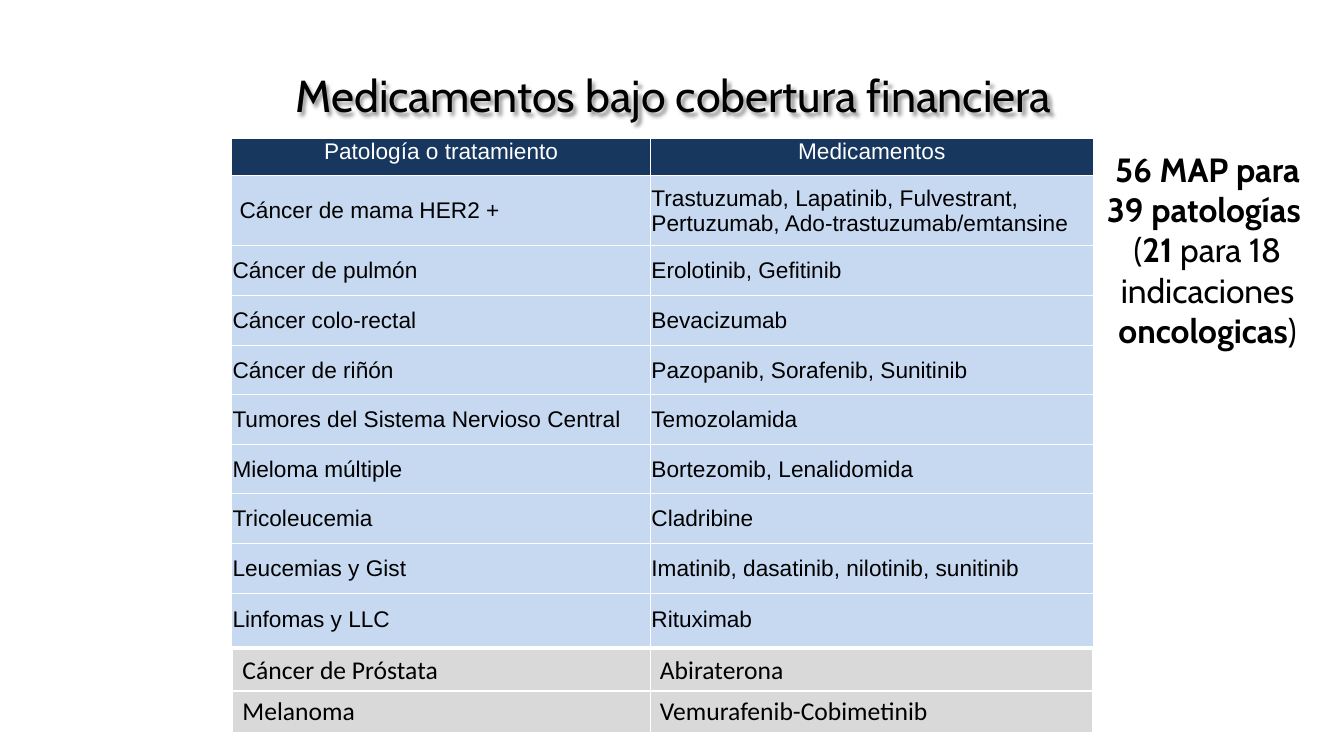
import pptx
import pptx.util
import pptx.dml.color
import pptx.enum.text
import pptx.oxml
import pptx.oxml.ns

PX = 9144  # EMU per px, 100 px to the inch
THEME = {
    "ink": "000000", "white": "FFFFFF",
    "header": "17375E", "treatment": "C6D9F1", "added": "D9D9D9",
    "title_font": "Cabin", "table_font": "Arial", "added_font": "Calibri",
    "title_size": 45.5, "note_size": 34.1, "table_size": 23, "added_size": 26,
}
NS = pptx.oxml.ns.nsdecls("a")
RGB = pptx.dml.color.RGBColor.from_string
CENTER = pptx.enum.text.PP_ALIGN.CENTER
LEFT = pptx.enum.text.PP_ALIGN.LEFT
TOP = pptx.enum.text.MSO_ANCHOR.TOP
MIDDLE = pptx.enum.text.MSO_ANCHOR.MIDDLE

treatments = [
    ("Patología o tratamiento", "Medicamentos"),
    ("Cáncer de mama HER2 +",
     "Trastuzumab, Lapatinib, Fulvestrant, Pertuzumab, Ado-trastuzumab/emtansine"),
    ("Cáncer de pulmón", "Erolotinib, Gefitinib"),
    ("Cáncer colo-rectal", "Bevacizumab"),
    ("Cáncer de riñón", "Pazopanib, Sorafenib, Sunitinib"),
    ("Tumores del Sistema Nervioso Central", "Temozolamida"),
    ("Mieloma múltiple", "Bortezomib, Lenalidomida"),
    ("Tricoleucemia", "Cladribine"),
    ("Leucemias y Gist", "Imatinib, dasatinib, nilotinib, sunitinib"),
    ("Linfomas y LLC", "Rituximab"),
]
added = [("Cáncer de Próstata", "Abiraterona"),
         ("Melanoma", "Vemurafenib-Cobimetinib")]

prs = pptx.Presentation()
prs.slide_width, prs.slide_height = 1896 * PX, 1067 * PX
s = prs.slides.add_slide(prs.slide_layouts[6])


def add_grid(rows, left, top, widths, heights, style, margins, rules):
    """Draw a white-ruled table; rules maps a row to the width of its bottom rule."""
    tbl = s.shapes.add_table(len(rows), 2, left * PX, top * PX,
                             sum(widths) * PX, sum(heights) * PX).table
    tbl.first_row = tbl.horz_banding = False
    for col, width in zip(tbl.columns, widths):
        col.width = width * PX
    for i, (row, height) in enumerate(zip(rows, heights)):
        tbl.rows[i].height = height * PX
        for j, text in enumerate(row):
            cell = tbl.cell(i, j)
            for side, width in (("L", 1), ("R", 1), ("T", rules.get(i - 1, 1)),
                                ("B", rules.get(i, 1))):
                cell._tc.get_or_add_tcPr().append(pptx.oxml.parse_xml(
                    f'<a:ln{side} {NS} w="{int(width * 12700)}"><a:solidFill>'
                    f'<a:srgbClr val="{THEME["white"]}"/></a:solidFill></a:ln{side}>'))
            cell.fill.solid()
            cell.fill.fore_color.rgb = RGB(THEME[style])
            (cell.margin_left, cell.margin_top,
             cell.margin_right, cell.margin_bottom) = [m * PX for m in margins]
            p = cell.text_frame.paragraphs[0]
            p.text = text
            p.alignment = LEFT
            font = p.runs[0].font
            prefix = "added" if style == "added" else "table"
            font.name = THEME[prefix + "_font"]
            font.size = pptx.util.Pt(THEME[prefix + "_size"])
            font.color.rgb = RGB(THEME["ink"])
    return tbl


def add_text(left, top, width, height, paragraphs, size):
    """Add a centred text box; each paragraph is a list of (text, bold) runs."""
    sp = s.shapes.add_textbox(left * PX, top * PX, width * PX, height * PX)
    tf = sp.text_frame
    tf.word_wrap = True
    tf.margin_left = tf.margin_right = 14 * PX
    tf.margin_top = tf.margin_bottom = 7 * PX
    for i, runs in enumerate(paragraphs):
        p = tf.add_paragraph() if i else tf.paragraphs[0]
        p.alignment = CENTER
        for text, bold in runs:
            r = p.add_run()
            r.text = text
            r.font.name = THEME["title_font"]
            r.font.size = pptx.util.Pt(size)
            r.font.bold = bold
            r.font.color.rgb = RGB(THEME["ink"])
    return sp


tbl = add_grid(treatments, 327, 195, [591, 624], [53, 99] + [70] * 7 + [75],
               "treatment", (1, 1, 1, 0), {1: 1.5, 6: 1.5})
for i in range(len(treatments)):
    for j in range(2):
        cell = tbl.cell(i, j)
        cell.vertical_anchor = MIDDLE if i else TOP
        if i == 0:
            cell.fill.fore_color.rgb = RGB(THEME["header"])
            p = cell.text_frame.paragraphs[0]
            p.alignment = CENTER
            p.runs[0].font.color.rgb = RGB(THEME["white"])
tbl.cell(1, 0).margin_left = 11 * PX

add_grid(added, 328, 917, [589, 624], [57, 58], "added", (14, 7, 14, 7), {0: 3})

title = add_text(322, 89, 1256, 178,
                 [[("Medicamentos bajo cobertura financiera", False)]],
                 THEME["title_size"])
title._element.spPr.append(pptx.oxml.parse_xml(
    f'<a:effectLst {NS}><a:outerShdw blurRad="50800" dist="38100" dir="2700000">'
    f'<a:srgbClr val="{THEME["ink"]}"><a:alpha val="40000"/></a:srgbClr>'
    '</a:outerShdw></a:effectLst>'))

add_text(1541, 203, 325, 355, [
    [("56 MAP para 39 patologías ", True)],
    [("(", False), ("21", True), (" para 18 indicaciones ", False),
     ("oncologicas", True), (")", False)],
], THEME["note_size"])

prs.save("out.pptx")
